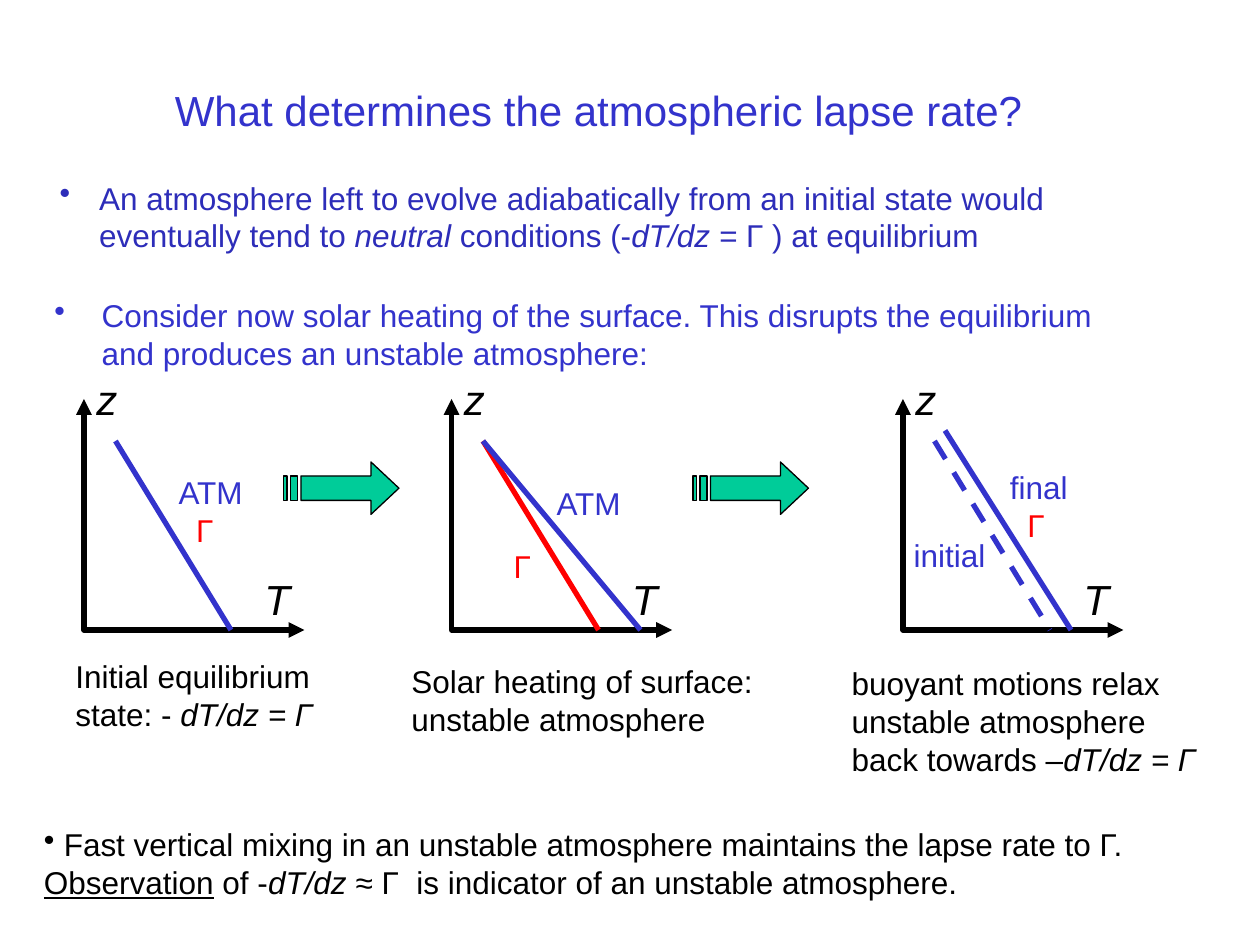
"""Build the slide on what determines the atmospheric lapse rate."""
import pptx
import pptx.util
import pptx.dml.color
import pptx.enum.dml
import pptx.enum.shapes
import pptx.enum.text
import pptx.oxml
import pptx.oxml.ns

Pt = pptx.util.Pt
BLUE, RED, BLACK, GREEN, NAVY = "3333CC", "FF0000", "000000", "00CC99", "2D2DB9"
TITLE = "What determines the atmospheric lapse rate?"
TOP, BASE = 228, 360

PANELS = [
    {"left": 48, "lines": [(18, 252, 84, 360, BLUE, False)]},
    {"left": 258, "lines": [(18, 252, 84, 360, RED, False),
                            (18, 252, 108, 360, BLUE, False)]},
    {"left": 516, "lines": [(18, 252, 84, 360, BLUE, True),
                            (24, 246, 96, 360, BLUE, False)]},
]
ARROWS = [(162, 264), (396, 264)]
ARROW = [
    [(49.5, 0), (49.5, 7.5), (10, 7.5), (10, 22.5), (49.5, 22.5), (49.5, 30), (66, 15)],
    [(4, 7.5), (4, 22.5), (8, 22.5), (8, 7.5)],
    [(0, 7.5), (0, 22.5), (2, 22.5), (2, 7.5)],
]

# Each text: box, wrap, paragraphs of (runs, colour, hanging, left margin, bullet)
def para(*runs, color=BLACK, left=0, hang=0, bullet=False):
    """Describe one paragraph; a run is plain text or a (text, style) pair."""
    pairs = [(run, "") if isinstance(run, str) else run for run in runs]
    return pairs, color, left, hang, bullet


GAMMA = para("Γ", color=RED, left=10)
TEXTS = [
    ((27, 98.5, 630, 51), True, [
        para("An atmosphere left to evolve adiabatically from an initial state would "
             "eventually tend to ", ("neutral", "i"), " conditions (-",
             ("dT/dz = ", "i"), "Γ ) at equilibrium",
             color=NAVY, left=22.5, hang=22.5, bullet=True)]),
    ((24, 165.5, 630, 51), True, [
        para("Consider now solar heating of the surface. This disrupts the equilibrium "
             "and produces an unstable atmosphere:",
             color=BLUE, left=27, hang=27, bullet=True)]),
    ((36, 372, 157, 51), False, [
        para("Initial equilibrium"), para("state: - ", ("dT/dz = Γ", "i"))]),
    ((228, 375, 234, 51), True, [
        para("Solar heating of surface: unstable atmosphere")]),
    ((479.5, 376, 223, 94), True, [
        para("buoyant motions relax"),
        para("unstable atmosphere back towards –", ("dT/dz = Γ", "i"))]),
    ((95, 267, 53, 51), False, [para("ATM", color=BLUE), GAMMA]),
    ((286.5, 309, 25, 29), False, [para("Γ", color=RED)]),
    ((311, 273, 53, 29), False, [para("ATM", color=BLUE)]),
    ((515, 303, 56, 29), False, [para("initial", color=BLUE)]),
    ((570, 264, 48, 51), False, [para("final", color=BLUE), GAMMA]),
    ((18, 468, 685, 51), True, [
        para(" Fast vertical mixing in an unstable atmosphere maintains the lapse rate to Γ.",
             bullet=True),
        para(("Observation", "u"), " of -", ("dT/dz ≈ ", "i"),
             "Γ  is indicator of an unstable atmosphere.")]),
]


def paint(target, color):
    """Set a fill, or a font or line colour, from a hex string."""
    if hasattr(target, "solid"):
        target.solid()
        target = target.fore_color
    else:
        target = target.color
    target.rgb = pptx.dml.color.RGBColor.from_string(color)


def style(font, size, color):
    """Set face, size and colour of a font."""
    font.name, font.size = "Arial", Pt(size)
    paint(font, color)


def write(slide, box, wrap, paras, size=18):
    """Add a text box with styled paragraphs."""
    frame = slide.shapes.add_textbox(*map(Pt, box)).text_frame
    frame.word_wrap = wrap
    for num, (runs, color, left, hang, bullet) in enumerate(paras):
        item = frame.add_paragraph() if num else frame.paragraphs[0]
        style(item.font, size, color)
        for text, mark in runs:
            run = item.add_run()
            run.text = text
            if mark == "i":
                run.font.italic = True
            elif mark == "u":
                run.font.underline = True
        props = item._p.get_or_add_pPr()
        props.set("marL", str(Pt(left)))
        props.set("indent", str(-Pt(hang)))
        if bullet:
            char = pptx.oxml.parse_xml(
                f'<a:buChar {pptx.oxml.ns.nsdecls("a")} char="•"/>')
            props.insert(0, char)


def outline(slide, paths, close):
    """Add a freeform made of one or more paths in points."""
    form = slide.shapes.build_freeform(*paths[0][0], scale=Pt(1))
    for num, spots in enumerate(paths):
        if num:
            form.move_to(*spots[0])
        form.add_line_segments(spots[1:], close=close)
    shape = form.convert_to_shape()
    shape.shadow.inherit = False
    return shape


def axes(slide, left):
    """Draw the z and T axes with their letters."""
    shape = outline(slide, [[(left, TOP), (left, BASE), (left + 126, BASE)]], False)
    shape.fill.background()
    shape.line.width = Pt(3)
    paint(shape.line, BLACK)
    for end in ("headEnd", "tailEnd"):
        shape.line._get_or_add_ln().append(pptx.oxml.parse_xml(
            f'<a:{end} {pptx.oxml.ns.nsdecls("a")} type="triangle"/>'))
    for letter, across, top in (("z", 0, 210), ("T", 96, 324)):
        write(slide, (left + across, top, 28, 36), False, [para((letter, "i"))], 24)


def profile(slide, left, x1, y1, x2, y2, color, dashed):
    """Draw one temperature profile."""
    line = slide.shapes.add_connector(
        pptx.enum.shapes.MSO_CONNECTOR.STRAIGHT,
        Pt(left + x1), Pt(y1), Pt(left + x2), Pt(y2))
    line.line.width = Pt(3)
    paint(line.line, color)
    if dashed:
        line.line.dash_style = pptx.enum.dml.MSO_LINE.DASH
    line._element.spPr.append(pptx.oxml.parse_xml(
        f'<a:effectLst {pptx.oxml.ns.nsdecls("a")}/>'))


def main():
    """Build and save the slide."""
    deck = pptx.Presentation()
    deck.slide_width, deck.slide_height = Pt(720), Pt(540)
    slide = deck.slides.add_slide(deck.slide_layouts[5])
    title = slide.shapes.title
    title.left, title.top, title.width, title.height = map(Pt, (24, 17.5, 636, 90))
    title.text_frame.text = TITLE
    title.text_frame.vertical_anchor = pptx.enum.text.MSO_ANCHOR.MIDDLE
    head = title.text_frame.paragraphs[0]
    head.alignment = pptx.enum.text.PP_ALIGN.CENTER
    style(head.font, 24, BLUE)
    for panel in PANELS:
        axes(slide, panel["left"])
        for line in panel["lines"]:
            profile(slide, panel["left"], *line)
    for left, top in ARROWS:
        paths = [[(left + x, top + y) for x, y in part] for part in ARROW]
        shape = outline(slide, paths, True)
        paint(shape.fill, GREEN)
        paint(shape.line, BLACK)
        shape.line.width = Pt(0.75)
    for box, wrap, paras in TEXTS:
        write(slide, box, wrap, paras)
    deck.save("out.pptx")


if __name__ == "__main__":
    main()
